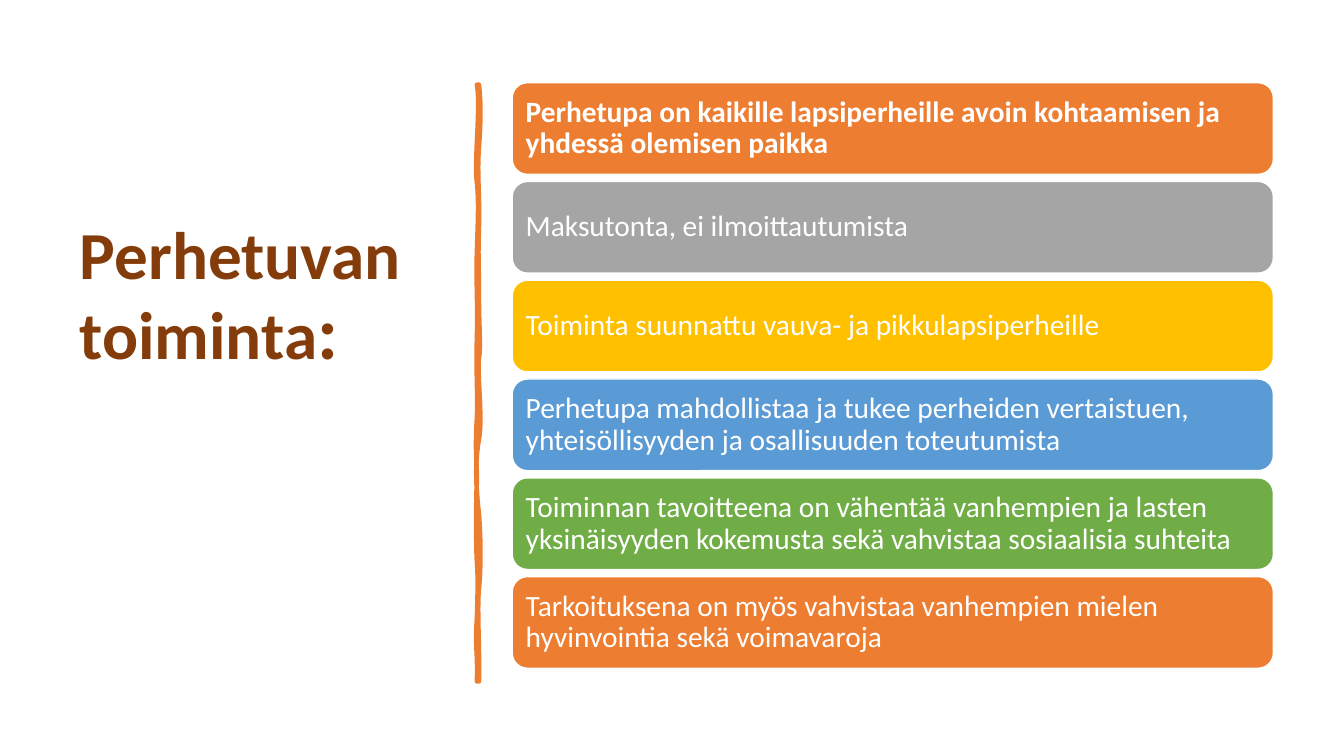
"""Build the slide that presents what the family house offers."""
from dataclasses import dataclass

from lxml.etree import SubElement
from pptx import Presentation
from pptx.dml.color import RGBColor
from pptx.enum.shapes import MSO_SHAPE as Shape
from pptx.enum.text import MSO_ANCHOR as Anchor, MSO_AUTO_SIZE as AutoSize, PP_ALIGN as Align
from pptx.oxml.ns import qn
from pptx.slide import Slide
from pptx.util import Inches, Pt

Point = tuple[float, float]


@dataclass(frozen=True)
class Theme:
    """Colours, font and type sizes of the slide."""
    font: str = "Calibri"
    title: str = "843C0B"
    white: str = "FFFFFF"
    orange: str = "ED7D31"
    grey: str = "A5A5A5"
    yellow: str = "FFC000"
    blue: str = "5B9BD5"
    green: str = "70AD47"
    title_size: int = 48
    colon_size: int = 54
    bar_size: int = 21


@dataclass(frozen=True)
class Bar:
    """One statement with its fill colour."""
    text: str
    fill: str
    bold: bool = False


@dataclass(frozen=True)
class Curve:
    """A cubic segment given by its two controls and its end."""
    c1: Point
    c2: Point
    end: Point


THEME = Theme()
BARS = (
    Bar("Perhetupa on kaikille lapsiperheille avoin kohtaamisen ja yhdessä olemisen paikka",
        THEME.orange, bold=True),
    Bar("Maksutonta, ei ilmoittautumista", THEME.grey),
    Bar("Toiminta suunnattu vauva- ja pikkulapsiperheille", THEME.yellow),
    Bar("Perhetupa mahdollistaa ja tukee perheiden vertaistuen, "
        "yhteisöllisyyden ja osallisuuden toteutumista", THEME.blue),
    Bar("Toiminnan tavoitteena on vähentää vanhempien ja lasten "
        "yksinäisyyden kokemusta sekä vahvistaa sosiaalisia suhteita", THEME.green),
    Bar("Tarkoituksena on myös vahvistaa vanhempien mielen hyvinvointia sekä voimavaroja",
        THEME.orange),
)
BAR_LEFT, BAR_TOP, BAR_WIDTH, BAR_HEIGHT, BAR_PITCH = 5.08, 0.82, 7.55, 0.91, 0.98
BAR_INSET = 0.09

DIVIDER_START: Point = (4.75, 0.84)
DIVIDER = (
    Curve((4.77, 1.02), (4.77, 1.19), (4.75, 1.46)),
    Curve((4.73, 1.73), (4.76, 1.95), (4.75, 2.26)),
    Curve((4.74, 2.57), (4.75, 2.62), (4.75, 2.94)),
    Curve((4.75, 3.25), (4.77, 3.42), (4.75, 3.56)),
    Curve((4.73, 3.7), (4.79, 4.14), (4.75, 4.36)),
    Curve((4.71, 4.57), (4.72, 4.84), (4.75, 5.1)),
    Curve((4.77, 5.36), (4.77, 5.64), (4.75, 5.84)),
    Curve((4.73, 6.03), (4.76, 6.5), (4.75, 6.76)),
    Curve((4.74, 6.76), (4.73, 6.76), (4.73, 6.76)),
    Curve((4.74, 6.46), (4.71, 6.44), (4.73, 6.13)),
    Curve((4.74, 5.83), (4.74, 5.7), (4.73, 5.57)),
    Curve((4.72, 5.44), (4.72, 4.95), (4.73, 4.77)),
    Curve((4.73, 4.59), (4.71, 4.45), (4.73, 4.15)),
    Curve((4.74, 3.86), (4.72, 3.73), (4.73, 3.35)),
    Curve((4.74, 2.98), (4.72, 2.81), (4.73, 2.5)),
    Curve((4.74, 2.18), (4.75, 2), (4.73, 1.81)),
    Curve((4.7, 1.63), (4.77, 1.04), (4.73, 0.84)),
)


def rgb(value: str) -> RGBColor:
    """Turn a hex string into a colour."""
    return RGBColor.from_string(value)


def format_run(r, size: int, color: str, bold: bool) -> None:
    """Give a run its font, size, colour and weight."""
    r.font.name = THEME.font
    r.font.size = Pt(size)
    r.font.bold = bold
    r.font.color.rgb = rgb(color)


def paint(sp, fill: str, line: str, width: float) -> None:
    """Set fill and outline and drop the shadow."""
    sp.shadow.inherit = False
    sp.fill.solid()
    sp.fill.fore_color.rgb = rgb(fill)
    sp.line.color.rgb = rgb(line)
    sp.line.width = Pt(width)


def add_title(s: Slide) -> None:
    """Place the title with its larger colon."""
    sp = s.shapes.title
    sp.left, sp.top, sp.width, sp.height = (Inches(v) for v in (0.69, 0.7, 3.74, 4.53))
    tf = sp.text_frame
    tf.text = "Perhetuvan toiminta"
    tf.word_wrap = True
    tf.auto_size = AutoSize.NONE
    tf.vertical_anchor = Anchor.MIDDLE
    p = tf.paragraphs[0]
    p.alignment = Align.LEFT
    p.line_spacing = 0.9
    format_run(p.runs[0], THEME.title_size, THEME.title, True)
    colon = p.add_run()
    colon.text = ":"
    format_run(colon, THEME.colon_size, THEME.title, True)


def bend(sp, curves: tuple[Curve, ...]) -> None:
    """Turn the straight segments of a freeform into cubic ones."""
    segments = list(sp.element.iter(qn("a:lnTo")))
    for segment, curve in zip(segments, curves):
        segment.tag = qn("a:cubicBezTo")
        segment.clear()
        for x, y in (curve.c1, curve.c2, curve.end):
            SubElement(segment, qn("a:pt"), x=str(Inches(x) - sp.left), y=str(Inches(y) - sp.top))


def add_divider(s: Slide) -> None:
    """Draw the hand-drawn vertical line."""
    x, y = DIVIDER_START
    builder = s.shapes.build_freeform(Inches(x), Inches(y))
    ends = [(Inches(curve.end[0]), Inches(curve.end[1])) for curve in DIVIDER]
    builder.add_line_segments(ends, close=True)
    sp = builder.convert_to_shape()
    bend(sp, DIVIDER)
    paint(sp, THEME.orange, THEME.orange, 3.25)


def add_bar(s: Slide, bar: Bar, top: float) -> None:
    """Draw one rounded bar with its statement."""
    sp = s.shapes.add_shape(Shape.ROUNDED_RECTANGLE, Inches(BAR_LEFT), Inches(top),
                            Inches(BAR_WIDTH), Inches(BAR_HEIGHT))
    paint(sp, bar.fill, THEME.white, 1)
    tf = sp.text_frame
    tf.text = bar.text
    tf.word_wrap = True
    tf.vertical_anchor = Anchor.MIDDLE
    tf.margin_left = tf.margin_right = Inches(BAR_INSET)
    tf.margin_top = tf.margin_bottom = Inches(BAR_INSET)
    p = tf.paragraphs[0]
    p.alignment = Align.LEFT
    p.line_spacing = 0.9
    format_run(p.runs[0], THEME.bar_size, THEME.white, bar.bold)


def main() -> None:
    """Build and save the presentation."""
    prs = Presentation()
    prs.slide_width, prs.slide_height = Inches(13.33), Inches(7.5)
    s = prs.slides.add_slide(prs.slide_layouts[5])
    add_title(s)
    add_divider(s)
    for i, bar in enumerate(BARS):
        add_bar(s, bar, BAR_TOP + i * BAR_PITCH)
    prs.save("out.pptx")


if __name__ == "__main__":
    main()
